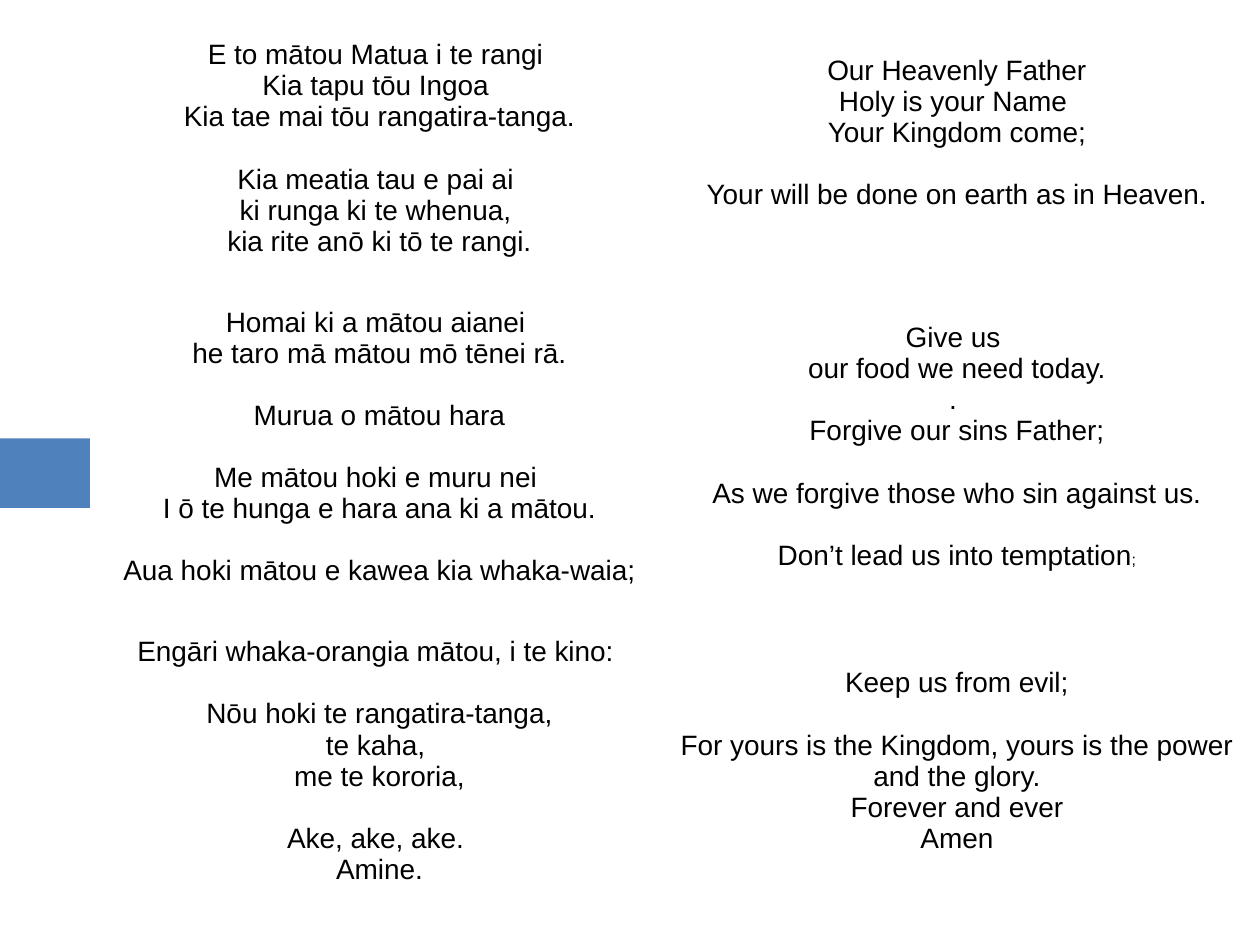
import pptx
from pptx.dml.color import RGBColor
from pptx.enum.shapes import MSO_SHAPE
from pptx.enum.text import MSO_ANCHOR, PP_ALIGN
from pptx.util import Cm, Pt

BLUE = RGBColor(0x4F, 0x81, 0xBD)
WHITE = RGBColor(0xFF, 0xFF, 0xFF)
BLACK = RGBColor(0, 0, 0)
FONT, SIZE, SMALL = "Arial", Pt(16), Pt(9)
STANZA_GAP = Pt(17.7)  # one line of text
MARGIN = Cm(0.08)

# Each row pairs Māori and English; a cell is a list of stanzas of lines
PRAYER = [
    (
        [["E to mātou Matua i te rangi ", "Kia tapu tōu Ingoa ",
          "Kia tae mai tōu rangatira-tanga."],
         ["Kia meatia tau e pai ai ", "ki runga ki te whenua, ",
          "kia rite anō ki tō te rangi."]],
        [["Our Heavenly Father", "Holy is your Name ", "Your Kingdom come;"],
         ["Your will be done on earth as in Heaven."]],
    ),
    (
        [["Homai ki a mātou aianei ", "he taro mā mātou mō tēnei rā."],
         ["Murua o mātou hara"],
         ["Me mātou hoki e muru nei ", "I ō te hunga e hara ana ki a mātou."],
         ["Aua hoki mātou e kawea kia whaka-waia;"]],
        [["Give us ", "our food we need today.", ". ",
          "Forgive our sins Father;"],
         ["As we forgive those who sin against us."],
         ["Don’t lead us into temptation"]],
    ),
    (
        [["Engāri whaka-orangia mātou, i te kino: "],
         ["Nōu hoki te rangatira-tanga,", "te kaha, ", "me te kororia,"],
         ["Ake, ake, ake. ", "Amine."]],
        [["Keep us from evil;"],
         ["For yours is the Kingdom, yours is the power and the glory.",
          "Forever and ever", "Amen"]],
    ),
]
COL_WIDTH = Cm(11.64)
ROW_HEIGHTS = [Cm(5.38), Cm(6.65), Cm(6.02)]


def add_run(p, text, size=SIZE):
    r = p.add_run()
    r.text = text
    r.font.name, r.font.size = FONT, size
    r.font.color.rgb = BLACK


def fill_cell(cell, stanzas):
    cell.fill.solid()
    cell.fill.fore_color.rgb = WHITE
    cell.vertical_anchor = MSO_ANCHOR.MIDDLE
    cell.margin_left = cell.margin_right = MARGIN
    cell.margin_top = cell.margin_bottom = MARGIN
    tf = cell.text_frame
    for i, lines in enumerate(stanzas):
        p = tf.add_paragraph() if i else tf.paragraphs[0]
        p.alignment = PP_ALIGN.CENTER
        p.space_before = STANZA_GAP if i else Pt(0)
        for j, line in enumerate(lines):
            if j:
                p.add_line_break()
            add_run(p, line)


prs = pptx.Presentation()
prs.slide_width, prs.slide_height = Cm(25.4), Cm(19.05)
s = prs.slides.add_slide(prs.slide_layouts[6])

# Arrow tab at the left edge, partly behind the table
tab = s.shapes.add_shape(MSO_SHAPE.PENTAGON, 0, Cm(8.84), Cm(3.3), Cm(1.4))
tab.adjustments[0] = 0.36
tab.shadow.inherit = False
tab.fill.solid()
tab.fill.fore_color.rgb = BLUE
tab.line.fill.background()

# Prayer in two languages
table = s.shapes.add_table(len(PRAYER), 2, Cm(1.83), Cm(0.3),
                           2 * COL_WIDTH, sum(ROW_HEIGHTS)).table
table.first_row = table.horz_banding = False
for col in table.columns:
    col.width = COL_WIDTH
for i, (height, languages) in enumerate(zip(ROW_HEIGHTS, PRAYER)):
    table.rows[i].height = height
    for j, stanzas in enumerate(languages):
        fill_cell(table.cell(i, j), stanzas)

# The first English verse sits half a line higher; the second ends small
table.cell(0, 1).margin_bottom = MARGIN + STANZA_GAP
add_run(table.cell(1, 1).text_frame.paragraphs[-1], ";", SMALL)

prs.save("out.pptx")
